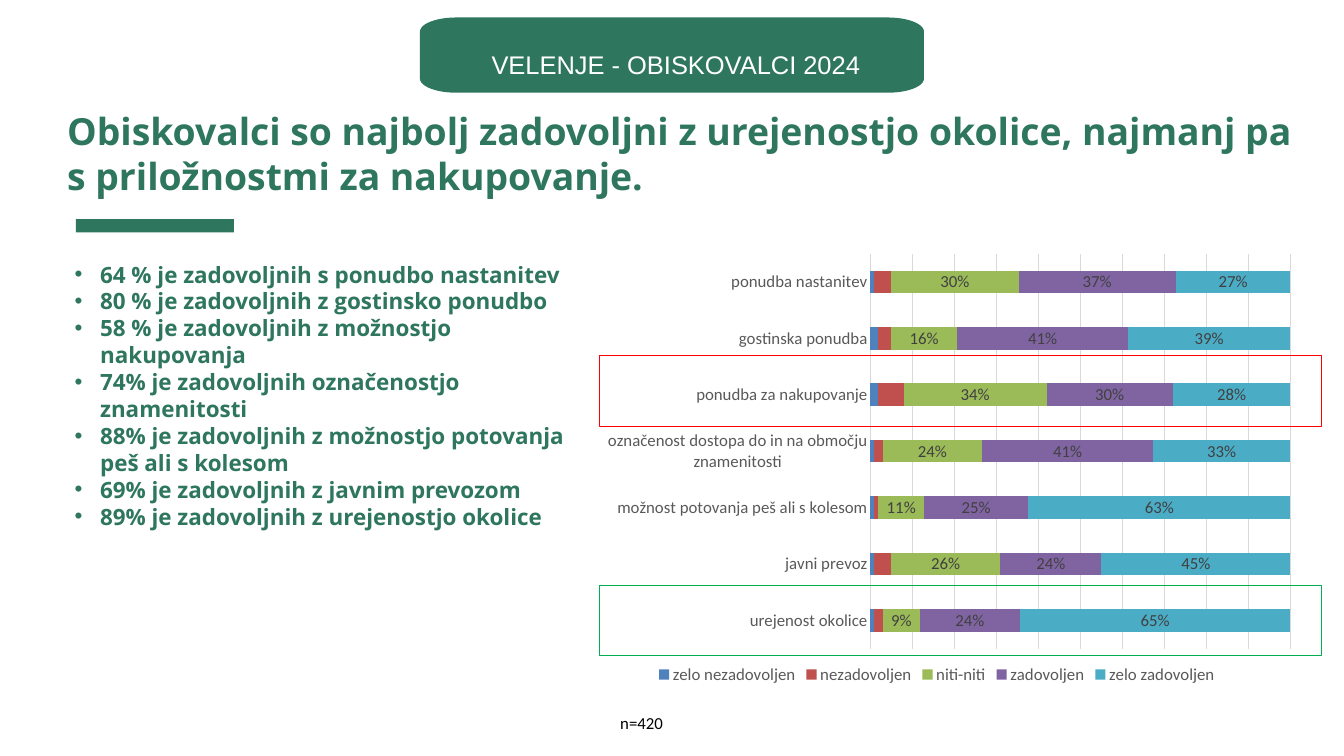
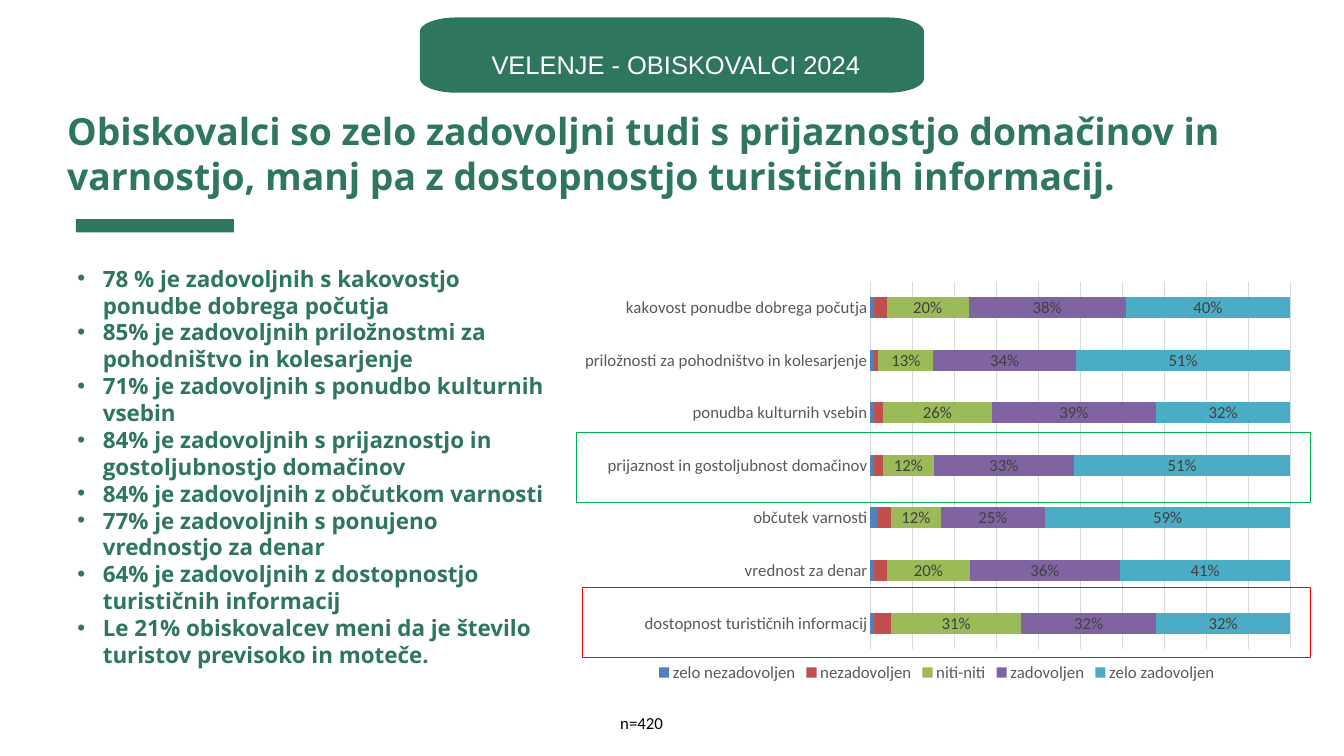
from math import cos, pi, sin

from lxml import etree
from pptx import Presentation
from pptx.chart.data import CategoryChartData
from pptx.dml.color import RGBColor
from pptx.enum.chart import XL_CHART_TYPE, XL_LABEL_POSITION, XL_LEGEND_POSITION, XL_TICK_LABEL_POSITION, XL_TICK_MARK
from pptx.enum.shapes import MSO_SHAPE
from pptx.enum.text import MSO_ANCHOR, MSO_AUTO_SIZE, PP_ALIGN
from pptx.oxml.ns import qn
from pptx.util import Inches, Pt

STACKED = XL_CHART_TYPE.BAR_STACKED_100
LABEL_CENTER = XL_LABEL_POSITION.CENTER
LEGEND_BOTTOM = XL_LEGEND_POSITION.BOTTOM
NO_TICK = XL_TICK_MARK.NONE
LABELS_BY_AXIS = XL_TICK_LABEL_POSITION.NEXT_TO_AXIS
RECTANGLE = MSO_SHAPE.RECTANGLE
TOP = MSO_ANCHOR.TOP
NO_AUTOFIT = MSO_AUTO_SIZE.NONE
LEFT, CENTER = PP_ALIGN.LEFT, PP_ALIGN.CENTER

BRAND, BEST, WORST = "2E765E", "00B050", "FF0000"
WHITE, BLACK, GRID, AXIS_TEXT, LABEL_TEXT = "FFFFFF", "000000", "D9D9D9", "595959", "404040"
HEADING_FONT, BANNER_FONT, CHART_FONT = "Open Sans", "Arial", "Calibri"

WIDTH, HEIGHT = 20, 11.25
BANNER_BOX = (6.25, 0.26, 7.5, 1.12)
BANNER_RADII = (0.54, 0.21)
BANNER_TEXT_BOX = (7.16, 0.55, 5.79, 0.64)
TITLE_BOX = (1, 1.61, 18.71, 1.35)
RULE_BOX = (1.13, 3.26, 2.35, 0.2)
SAMPLE_BOX = (9.08, 10.53, 3.67, 0.45)
PLOT_AREA = {"x": 0.414, "y": 0.074, "w": 0.542, "h": 0.842}
NO_INSETS, INSETS = (0, 0), (0.15, 0.07)
HANGING = Inches(0.38)

BANNER = "VELENJE - OBISKOVALCI 2024"
SAMPLE = "n=420"
RATINGS = [
    ("zelo nezadovoljen", "4F81BD", False),
    ("nezadovoljen", "C0504D", False),
    ("niti-niti", "9BBB59", True),
    ("zadovoljen", "8064A2", True),
    ("zelo zadovoljen", "4BACC6", True),
]

SLIDES = [
    {
        "title": [
            "Obiskovalci so najbolj zadovoljni z urejenostjo okolice, najmanj pa",
            "s priložnostmi za nakupovanje.",
        ],
        "findings": [
            "64 % je zadovoljnih s ponudbo nastanitev",
            "80 % je zadovoljnih z gostinsko ponudbo",
            "58 % je zadovoljnih z možnostjo nakupovanja",
            "74% je zadovoljnih označenostjo znamenitosti",
            "88% je zadovoljnih z možnostjo potovanja peš ali s kolesom",
            "69% je zadovoljnih z javnim prevozom",
            "89% je zadovoljnih z urejenostjo okolice",
        ],
        "findings_box": (0.96, 3.81, 7.71, 5),
        "chart_box": (8.17, 3.26, 11.54, 6.98),
        "shares": {
            "ponudba nastanitev": (1, 4, 30, 37, 27),
            "gostinska ponudba": (2, 3, 16, 41, 39),
            "ponudba za nakupovanje": (2, 6, 34, 30, 28),
            "označenost dostopa do in na območju znamenitosti": (1, 2, 24, 41, 33),
            "možnost potovanja peš ali s kolesom": (1, 1, 11, 25, 63),
            "javni prevoz": (1, 4, 26, 24, 45),
            "urejenost okolice": (1, 2, 9, 24, 65),
        },
        "highlights": [
            (BEST, (8.92, 8.71, 10.75, 1.05)),
            (WORST, (8.92, 5.29, 10.75, 1.05)),
        ],
    },
    {
        "title": [
            "Obiskovalci so zelo zadovoljni tudi s prijaznostjo domačinov in "
            "varnostjo, manj pa z dostopnostjo turističnih informacij.",
        ],
        "findings": [
            "78 % je zadovoljnih s kakovostjo ponudbe dobrega počutja",
            "85% je zadovoljnih priložnostmi za pohodništvo in kolesarjenje",
            "71% je zadovoljnih s ponudbo kulturnih vsebin",
            "84% je zadovoljnih s prijaznostjo in gostoljubnostjo domačinov",
            "84% je zadovoljnih z občutkom varnosti",
            "77% je zadovoljnih s ponujeno vrednostjo za denar",
            "64% je zadovoljnih z dostopnostjo turističnih informacij",
            "Le 21% obiskovalcev meni da je število turistov previsoko in moteče.",
        ],
        "findings_box": (1, 3.87, 7.38, 6.61),
        "chart_box": (8.17, 3.71, 11.54, 6.5),
        "shares": {
            "kakovost ponudbe dobrega počutja": (1, 3, 20, 38, 40),
            "priložnosti za pohodništvo in kolesarjenje": (1, 1, 13, 34, 51),
            "ponudba kulturnih vsebin": (1, 2, 26, 39, 32),
            "prijaznost in gostoljubnost domačinov": (1, 2, 12, 33, 51),
            "občutek varnosti": (2, 3, 12, 25, 59),
            "vrednost za denar": (1, 3, 20, 36, 41),
            "dostopnost turističnih informacij": (1, 4, 31, 32, 32),
        },
        "highlights": [
            (BEST, (8.58, 6.43, 10.92, 1.05)),
            (WORST, (8.67, 8.74, 10.83, 1.05)),
        ],
    },
]


def color(value):
    return RGBColor.from_string(value)


def inches(box):
    return [Inches(length) for length in box]


def style_font(font, name, size, value, bold=False):
    font.name, font.size, font.bold = name, Pt(size), bold
    font.color.rgb = color(value)


def add_bullet(paragraph):
    properties = paragraph._p.get_or_add_pPr()
    properties.set("marL", str(HANGING))
    properties.set("indent", str(-HANGING))
    tint = etree.SubElement(properties, qn("a:buClr"))
    etree.SubElement(tint, qn("a:srgbClr"), val=BRAND)
    etree.SubElement(properties, qn("a:buFont"), typeface="Arial")
    etree.SubElement(properties, qn("a:buChar"), char="•")


def write(frame, lines, font, insets=NO_INSETS, align=LEFT, spacing=None, bullets=False):
    frame.word_wrap = True
    frame.auto_size = NO_AUTOFIT
    frame.vertical_anchor = TOP
    frame.margin_left = frame.margin_right = Inches(insets[0])
    frame.margin_top = frame.margin_bottom = Inches(insets[1])
    frame.text = "\n".join(lines)
    for paragraph in frame.paragraphs:
        if bullets:
            add_bullet(paragraph)
        paragraph.alignment = align
        if spacing:
            paragraph.line_spacing = spacing
        style_font(paragraph.font, *font)


def add_text(slide, box, lines, font, **options):
    write(slide.shapes.add_textbox(*inches(box)).text_frame, lines, font, **options)


def paint(shape, value):
    shape.shadow.inherit = False
    shape.fill.solid()
    shape.fill.fore_color.rgb = color(value)
    shape.line.fill.background()


def add_banner(slide):
    left, top, width, height = BANNER_BOX
    rx, ry = BANNER_RADII
    centers = [
        (left + width - rx, top + height - ry),
        (left + rx, top + height - ry),
        (left + rx, top + ry),
        (left + width - rx, top + ry),
    ]
    steps = 12
    outline = []
    for corner, (x, y) in enumerate(centers):
        for step in range(steps + 1):
            angle = (corner + step / steps) * pi / 2
            outline.append(inches((x + rx * cos(angle), y + ry * sin(angle))))
    builder = slide.shapes.build_freeform(*outline[0])
    builder.add_line_segments(outline[1:], close=True)
    paint(builder.convert_to_shape(), BRAND)
    add_text(slide, BANNER_TEXT_BOX, [BANNER], (BANNER_FONT, 27.3, WHITE), align=CENTER, spacing=1.4)


def place_plot(chart):
    plot_area = chart._chartSpace.chart.plotArea
    for layout in plot_area.findall(qn("c:layout")):
        plot_area.remove(layout)
    layout = etree.Element(qn("c:layout"))
    manual = etree.SubElement(layout, qn("c:manualLayout"))
    settings = {"layoutTarget": "inner", "xMode": "edge", "yMode": "edge", **PLOT_AREA}
    for tag, value in settings.items():
        etree.SubElement(manual, qn(f"c:{tag}"), val=str(value))
    plot_area.insert(0, layout)


def add_ratings_chart(slide, box, shares):
    data = CategoryChartData(number_format="0%")
    data.categories = list(shares)
    for (rating, _, _), percents in zip(RATINGS, zip(*shares.values())):
        data.add_series(rating, [percent / 100 for percent in percents])
    chart = slide.shapes.add_chart(STACKED, *inches(box), data).chart
    style_font(chart.font, CHART_FONT, 18, BLACK)
    chart.has_title = False
    chart.has_legend = True
    chart.legend.position = LEGEND_BOTTOM
    chart.legend.include_in_layout = False
    style_font(chart.legend.font, CHART_FONT, 18, AXIS_TEXT)

    topics = chart.category_axis
    topics.reverse_order = True
    topics.major_tick_mark = topics.minor_tick_mark = NO_TICK
    topics.tick_label_position = LABELS_BY_AXIS
    style_font(topics.tick_labels.font, CHART_FONT, 18, AXIS_TEXT)
    scale = chart.value_axis
    scale.visible = False
    scale.major_tick_mark = scale.minor_tick_mark = NO_TICK
    scale.minimum_scale, scale.maximum_scale, scale.major_unit = 0, 1, 0.1
    scale.has_major_gridlines = True
    for line in (topics.format.line, scale.major_gridlines.format.line):
        line.color.rgb = color(GRID)
        line.width = Pt(0.75)

    plot = chart.plots[0]
    plot.gap_width, plot.overlap = 150, 100
    plot.vary_by_categories = False
    for series, (_, tint, labelled) in zip(plot.series, RATINGS):
        series.format.fill.solid()
        series.format.fill.fore_color.rgb = color(tint)
        series.invert_if_negative = False
        if labelled:
            labels = series.data_labels
            labels.show_value = True
            labels.position = LABEL_CENTER
            labels.number_format, labels.number_format_is_linked = "0%", False
            style_font(labels.font, CHART_FONT, 18, LABEL_TEXT)
    place_plot(chart)


def add_highlight(slide, tint, box):
    highlight = slide.shapes.add_shape(RECTANGLE, *inches(box))
    highlight.shadow.inherit = False
    highlight.fill.background()
    highlight.line.color.rgb = color(tint)
    highlight.line.width = Pt(1)


def build_slide(deck, content):
    slide = deck.slides.add_slide(deck.slide_layouts.get_by_name("Title Only"))
    title = slide.shapes.title
    title.left, title.top, title.width, title.height = inches(TITLE_BOX)
    write(title.text_frame, content["title"], (HEADING_FONT, 40, BRAND, True))
    paint(slide.shapes.add_shape(RECTANGLE, *inches(RULE_BOX)), BRAND)
    add_text(slide, content["findings_box"], content["findings"],
             (HEADING_FONT, 24, BRAND, True), insets=INSETS, bullets=True)
    add_text(slide, SAMPLE_BOX, [SAMPLE], (CHART_FONT, 18, BLACK), insets=INSETS)
    add_banner(slide)
    add_ratings_chart(slide, content["chart_box"], content["shares"])
    for tint, box in content["highlights"]:
        add_highlight(slide, tint, box)


def main():
    deck = Presentation()
    deck.slide_width, deck.slide_height = Inches(WIDTH), Inches(HEIGHT)
    for content in SLIDES:
        build_slide(deck, content)
    deck.save("out.pptx")


if __name__ == "__main__":
    main()
